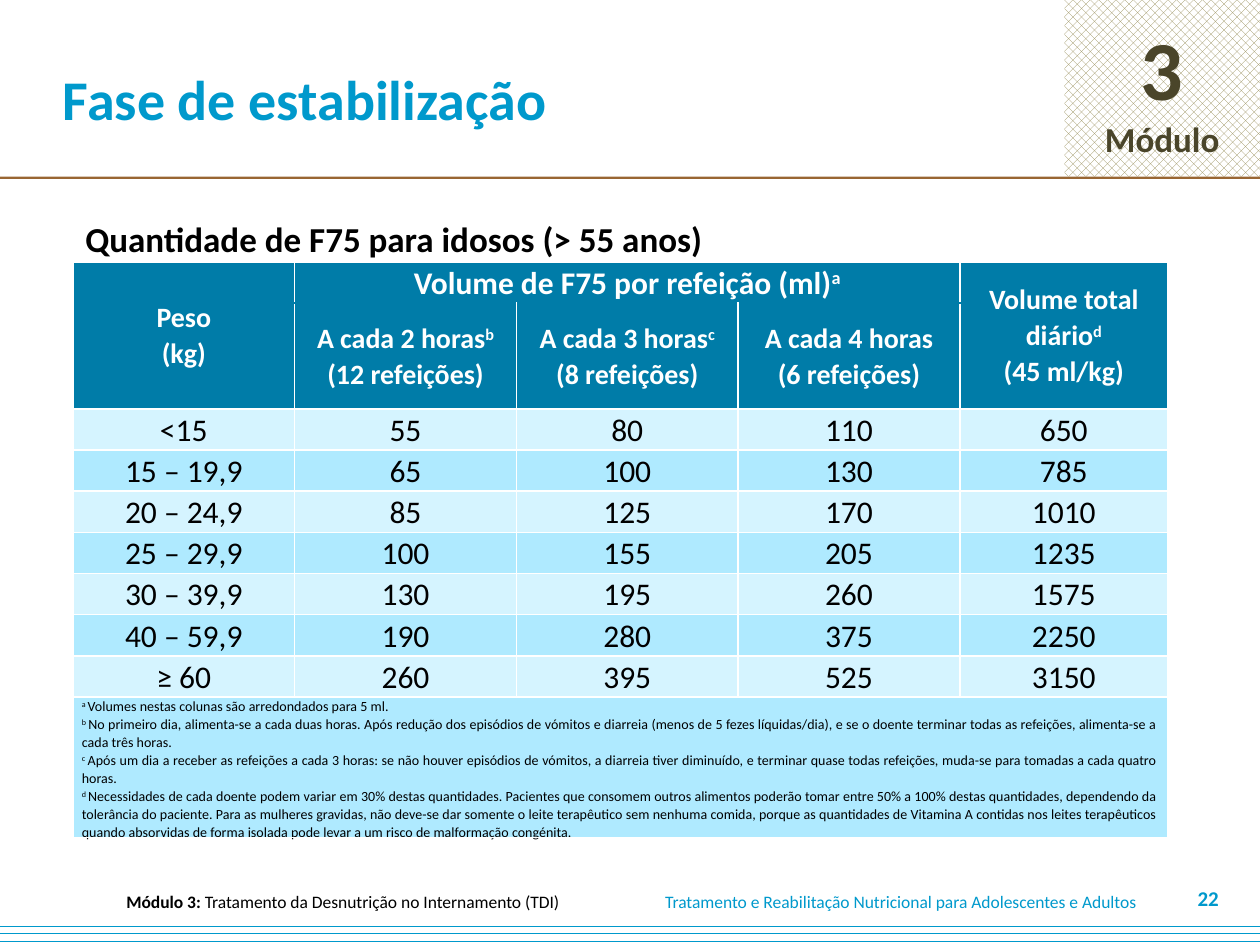
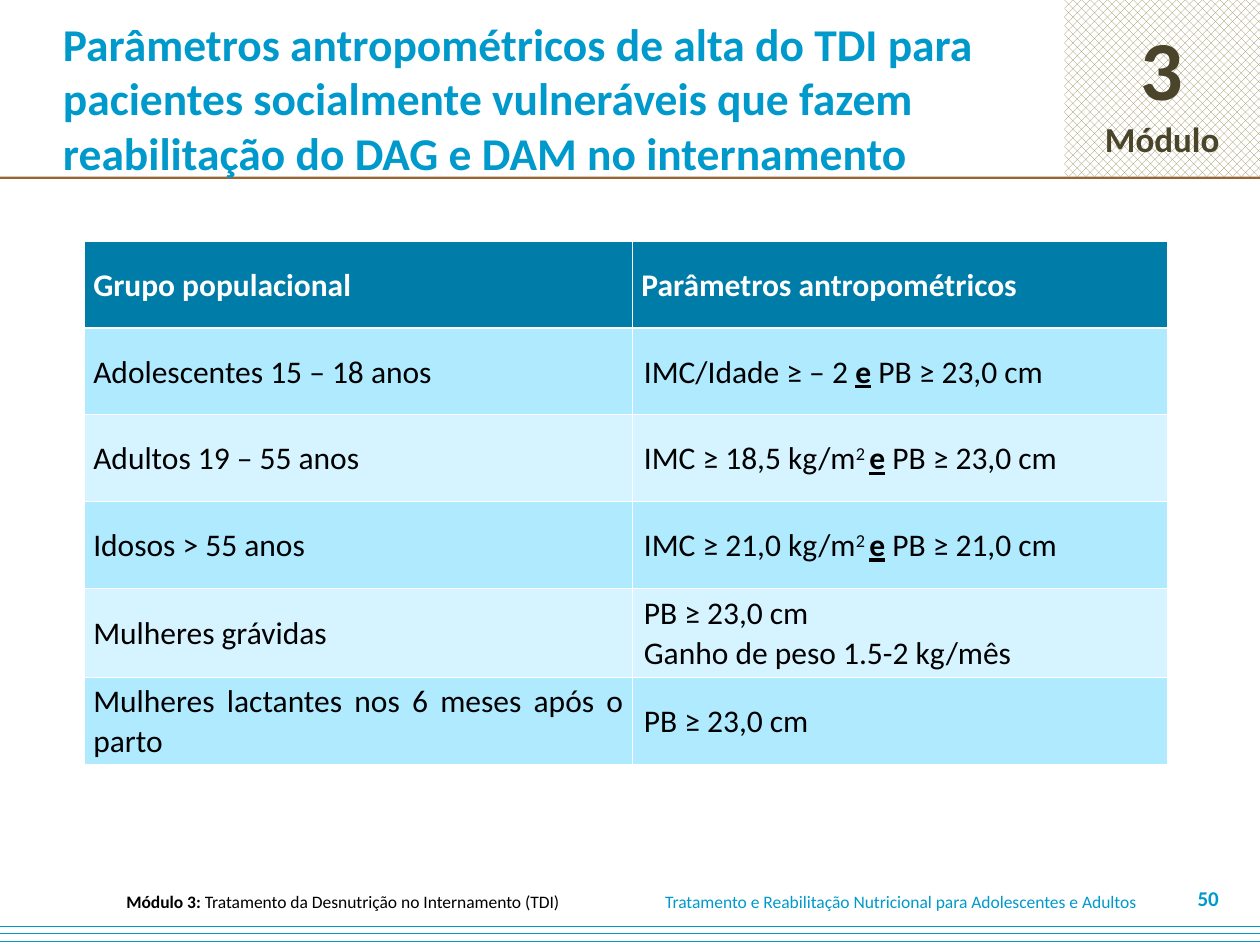
from dataclasses import dataclass

from pptx import Presentation
from pptx.dml.color import RGBColor as Rgb
from pptx.enum.dml import MSO_PATTERN as Pattern
from pptx.enum.shapes import MSO_SHAPE as Shape
from pptx.enum.text import MSO_ANCHOR as Anchor
from pptx.enum.text import PP_ALIGN as Align
from pptx.oxml.ns import qn
from pptx.util import Cm, Pt
from lxml.etree import SubElement


@dataclass(frozen=True)
class Theme:
    font: str = "Calibri"
    blue: str = "0099CC"
    header: str = "007CA8"
    bands: tuple = ("D5F4FF", "AFEAFF")
    white: str = "FFFFFF"
    black: str = "000000"
    olive: str = "948A54"
    dark_olive: str = "4A452A"
    brown: str = "996633"
    badge_size: int = 48
    title_size: int = 32
    long_title_size: int = 26
    subtitle_size: int = 20
    table_size: int = 18
    column_size: int = 16
    number_size: int = 12
    footer_size: int = 10
    note_size: int = 8


THEME = Theme()
SLIDE_WIDTH, SLIDE_HEIGHT = 25.4, 19.05

F75_NOTES = [
    "^a ^Volumes nestas colunas são arredondados para 5 ml.",
    "^b ^No primeiro dia, alimenta-se a cada duas horas. Após redução dos episódios de "
    "vómitos e diarreia (menos de 5 fezes líquidas/dia), e se o doente terminar todas as "
    "refeições, alimenta-se a cada três horas.",
    "^c ^Após um dia a receber as refeições a cada 3 horas: se não houver episódios de "
    "vómitos, a diarreia tiver diminuído, e terminar quase todas refeições, muda-se para "
    "tomadas a cada quatro horas.",
    "^d ^Necessidades de cada doente podem variar em 30% destas quantidades. Pacientes que "
    "consomem outros alimentos poderão tomar entre 50% a 100% destas quantidades, dependendo "
    "da tolerância do paciente. Para as mulheres gravidas, não deve-se dar somente o leite "
    "terapêutico sem nenhuma comida, porque as quantidades de Vitamina A contidas nos leites "
    "terapêuticos quando absorvidas de forma isolada pode levar a um risco de malformação "
    "congénita.",
]

F75_ROWS = [
    ["Peso\n(kg)", "Volume de F75 por refeição (ml)^a^", None, None,
     "Volume total diário^d^\n(45 ml/kg)"],
    [None, "A cada 2 horas^b^\n(12 refeições)", "A cada 3 horas^c^\n(8 refeições)",
     "A cada 4 horas\n(6 refeições)", None],
    ["<15", "55", "80", "110", "650"],
    ["15 – 19,9", "65", "100", "130", "785"],
    ["20 – 24,9", "85", "125", "170", "1010"],
    ["25 – 29,9", "100", "155", "205", "1235"],
    ["30 – 39,9", "130", "195", "260", "1575"],
    ["40 – 59,9", "190", "280", "375", "2250"],
    ["≥ 60", "260", "395", "525", "3150"],
    ["\n".join(F75_NOTES), None, None, None, None],
]

DISCHARGE_ROWS = [
    ["Grupo populacional", "Parâmetros antropométricos"],
    ["Adolescentes 15 – 18 anos", "IMC/Idade ≥ – 2 *_e_* PB ≥ 23,0 cm"],
    ["Adultos 19 – 55 anos", "IMC ≥ 18,5 kg/m^2 ^*_e_* PB ≥ 23,0 cm"],
    ["Idosos > 55 anos", "IMC ≥ 21,0 kg/m^2 ^*_e_* PB ≥ 21,0 cm"],
    ["Mulheres grávidas", "PB ≥ 23,0 cm\nGanho de peso 1.5-2 kg/mês"],
    ["Mulheres lactantes nos 6 meses após o parto", "PB ≥ 23,0 cm"],
]


def split_marks(line):
    for bold, bold_part in enumerate(line.split("*")):
        for underline, underline_part in enumerate(bold_part.split("_")):
            for raised, text in enumerate(underline_part.split("^")):
                if text:
                    yield text, bold % 2, underline % 2, raised % 2


def write_text(frame, text, size, colour=THEME.black, bold=False, align=Align.LEFT,
               spacing=None, indent=0, sizes=()):
    frame.word_wrap = True
    for index, line in enumerate(text.split("\n")):
        para = frame.paragraphs[0] if index == 0 else frame.add_paragraph()
        para.alignment = align
        if spacing:
            para.line_spacing = spacing
        if indent:
            properties = para._p.get_or_add_pPr()
            properties.set("marL", str(Cm(indent)))
            properties.set("indent", "0")
        for words, strong, underline, raised in split_marks(line):
            span = para.add_run()
            span.text = words
            font = span.font
            font.name = THEME.font
            font.size = Pt(sizes[index] if sizes else size)
            font.color.rgb = Rgb.from_string(colour)
            font.bold = bold or bool(strong)
            if underline:
                font.underline = True
            if raised:
                span._r.get_or_add_rPr().set("baseline", "30000")


def add_text(slide, left, top, width, height, text, anchor=Anchor.MIDDLE, insets=None,
             **text_format):
    box = slide.shapes.add_textbox(Cm(left), Cm(top), Cm(width), Cm(height))
    frame = box.text_frame
    frame.vertical_anchor = anchor
    if insets:
        (frame.margin_left, frame.margin_top,
         frame.margin_right, frame.margin_bottom) = map(Cm, insets)
    write_text(frame, text, **text_format)


def add_band(slide, left, top, width, height, colour, pattern=None):
    band = slide.shapes.add_shape(Shape.RECTANGLE, Cm(left), Cm(top), Cm(width), Cm(height))
    band.shadow.inherit = False
    band.line.fill.background()
    if pattern is None:
        band.fill.solid()
    else:
        band.fill.patterned()
        band.fill.pattern = pattern
        band.fill.back_color.rgb = Rgb.from_string(THEME.white)
    band.fill.fore_color.rgb = Rgb.from_string(colour)
    return band


def add_frame(slide, title, title_size, number):
    badge = add_band(slide, 21.46, 0, 3.94, 3.56, THEME.olive, Pattern.PERCENT_50)
    badge.text_frame.vertical_anchor = Anchor.MIDDLE
    write_text(badge.text_frame, "3\nMódulo", size=THEME.badge_size,
               sizes=(THEME.badge_size, THEME.subtitle_size), colour=THEME.dark_olive,
               bold=True, align=Align.CENTER)
    add_band(slide, 0, 3.56, SLIDE_WIDTH, 0.05, THEME.brown)
    add_text(slide, 0.74, 17.91, 12.34, 0.51,
             "*Módulo 3: *Tratamento da Desnutrição no Internamento (TDI)",
             size=THEME.footer_size, align=Align.CENTER)
    add_text(slide, 13.16, 17.91, 10.29, 0.51,
             "Tratamento e Reabilitação Nutricional para Adolescentes e Adultos",
             size=THEME.footer_size, colour=THEME.blue)
    add_band(slide, 0, 18.52, SLIDE_WIDTH, 0.53, THEME.blue, Pattern.DASHED_HORIZONTAL)
    add_text(slide, 0, 0, 21.79, 3.94, title, insets=(1.27, 0.13, 0.25, 0.13),
             size=title_size, colour=THEME.blue, bold=True)
    add_text(slide, 23.55, 17.78, 1.27, 0.64, number, size=THEME.number_size,
             colour=THEME.blue, bold=True, align=Align.RIGHT)


def set_border(cell, side, colour):
    line = SubElement(cell._tc.get_or_add_tcPr(), qn(f"a:ln{side}"), w=str(Pt(1)))
    SubElement(SubElement(line, qn("a:solidFill")), qn("a:srgbClr"), val=colour)


def add_table(slide, left, top, widths, heights, rows, header_count, cell_format,
              merges=(), seamless=()):
    table = slide.shapes.add_table(len(rows), len(widths), Cm(left), Cm(top),
                                   Cm(sum(widths)), Cm(sum(heights))).table
    table.first_row = table.horz_banding = False
    for column, width in zip(table.columns, widths):
        column.width = Cm(width)
    for row, height in zip(table.rows, heights):
        row.height = Cm(height)
    for first, last in merges:
        table.cell(*first).merge(table.cell(*last))
    for row, texts in enumerate(rows):
        is_header = row < header_count
        fill = THEME.header if is_header else THEME.bands[row % 2]
        for column, text in enumerate(texts):
            cell = table.cell(row, column)
            cell.margin_left = cell.margin_right = Cm(0.18)
            cell.margin_top = cell.margin_bottom = 0
            cell.vertical_anchor = Anchor.MIDDLE
            joined = {"T": (row - 1, column) in seamless, "B": (row, column) in seamless}
            for side in "LRTB":
                set_border(cell, side, fill if joined.get(side) else THEME.white)
            cell.fill.solid()
            cell.fill.fore_color.rgb = Rgb.from_string(fill)
            if text is not None:
                write_text(cell.text_frame, text, bold=is_header, spacing=1.05,
                           colour=THEME.white if is_header else THEME.black,
                           **cell_format(row, column))


def format_f75_cell(row, column):
    if row == len(F75_ROWS) - 1:
        return {"size": THEME.note_size, "align": Align.JUSTIFY}
    is_column_title = row == 1 or (row == 0 and column != 1)
    size = THEME.column_size if is_column_title else THEME.table_size
    return {"size": size, "align": Align.CENTER}


def format_discharge_cell(row, column):
    return {"size": THEME.table_size, "align": Align.JUSTIFY,
            "indent": 0.05 if row and column else 0}


def add_f75_slide(deck):
    slide = deck.slides.add_slide(deck.slide_layouts[6])
    add_frame(slide, "Fase de estabilização", THEME.title_size, "22")
    add_text(slide, 1.47, 4.27, 16.94, 1.12, "Quantidade de F75 para idosos (> 55 anos)",
             anchor=Anchor.TOP, size=THEME.subtitle_size, bold=True)
    add_table(slide, 1.47, 5.28, [4.47] * 4 + [4.19], [0.83, 2.12] + [0.83] * 7 + [2.82],
              F75_ROWS, 2, format_f75_cell,
              merges=[((0, 0), (1, 0)), ((0, 1), (0, 3)), ((0, 4), (1, 4)), ((9, 0), (9, 4))],
              seamless=[(0, column) for column in range(5)])


def add_discharge_slide(deck):
    slide = deck.slides.add_slide(deck.slide_layouts[6])
    add_frame(slide, "Parâmetros antropométricos de alta do TDI para pacientes socialmente "
              "vulneráveis que fazem reabilitação do DAG e DAM no internamento",
              THEME.long_title_size, "50")
    add_table(slide, 1.7, 4.86, [11.05, 10.8], [1.75] * 4 + [1.8, 1.75],
              DISCHARGE_ROWS, 1, format_discharge_cell)


def main():
    deck = Presentation()
    deck.slide_width, deck.slide_height = Cm(SLIDE_WIDTH), Cm(SLIDE_HEIGHT)
    add_f75_slide(deck)
    add_discharge_slide(deck)
    deck.save("out.pptx")


if __name__ == "__main__":
    main()
